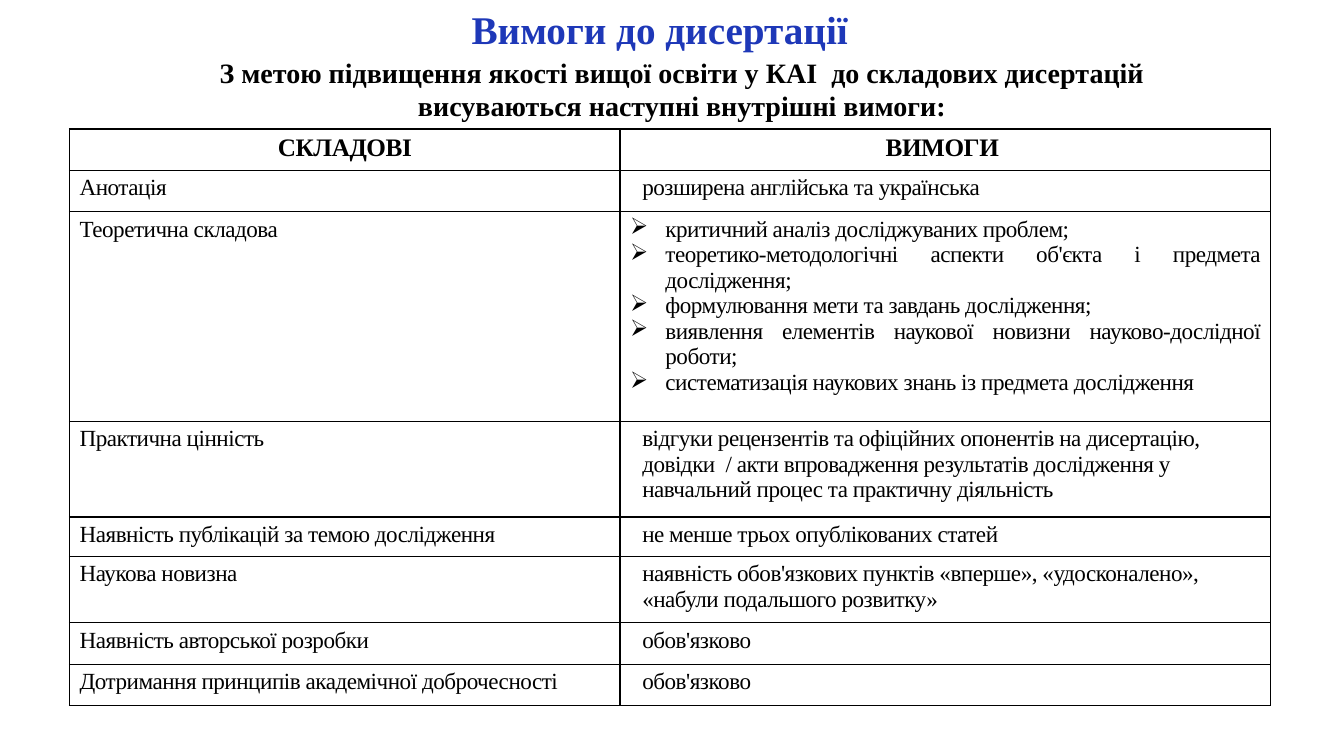
from lxml import etree
from pptx import Presentation
from pptx import util as u
from pptx.dml.color import RGBColor
from pptx.enum import text
from pptx.oxml.ns import qn

TITLE = "Вимоги до дисертації"
INTRO = ["З метою підвищення якості вищої освіти у КАІ  до складових дисертацій ",
         "висуваються наступні внутрішні вимоги: "]
HEADER = ("СКЛАДОВІ", "ВИМОГИ ")
# component, requirement (a list is bulleted), row height
REQUIREMENTS = [
    ("Анотація ", "розширена англійська та українська", 0.41),
    ("Теоретична складова", [
        "критичний аналіз досліджуваних проблем;",
        "теоретико-методологічні аспекти об'єкта і предмета дослідження;",
        "формулювання мети та завдань дослідження;",
        "виявлення елементів наукової новизни науково-дослідної роботи;",
        "систематизація наукових знань із предмета дослідження ",
    ], 2.08),
    ("Практична цінність",
     "відгуки рецензентів та офіційних опонентів на дисертацію, довідки  / акти "
     "впровадження результатів дослідження у навчальний процес та практичну діяльність", 0.95),
    ("Наявність публікацій за темою дослідження ", "не менше трьох опублікованих статей", 0.39),
    ("Наукова новизна",
     "наявність обов'язкових пунктів «вперше», «удосконалено», «набули подальшого розвитку»", 0.66),
    ("Наявність авторської розробки", "обов'язково", 0.41),
    ("Дотримання принципів академічної доброчесності", "обов'язково", 0.41),
]
COLORS = {"title": "1E38B8", "text": "000000"}
FONT = "Times New Roman"
COLUMNS = (5.46, 6.45)
HEADER_HEIGHT = 0.41
BODY_SIZE = 16.5
SPACING = -30  # hundredths of a point
CENTER, JUSTIFY, LEFT = (text.PP_ALIGN.CENTER, text.PP_ALIGN.JUSTIFY, text.PP_ALIGN.LEFT)


def add_run(p, words, size, color="text", bold=False, spacing=None):
    r = p.add_run()
    r.text = words
    r.font.name, r.font.size, r.font.bold = FONT, u.Pt(size), bold
    r.font.color.rgb = RGBColor.from_string(COLORS[color])
    if spacing is not None:
        r.font._element.set("spc", str(spacing))


def add_lines(tf, lines, size, align, indent=0, bullet=None, **style):
    for i, line in enumerate(lines):
        p = tf.paragraphs[0] if i == 0 else tf.add_paragraph()
        p.alignment = align
        pPr = p._p.get_or_add_pPr()
        if indent:
            pPr.set("marL", str(u.Inches(indent)))
        if bullet:
            pPr.set("indent", str(-u.Inches(indent)))
            etree.SubElement(pPr, qn("a:buChar")).set("char", bullet)
        add_run(p, line, size, **style)


def add_text(slide, box, lines, size, align, wrap, **style):
    tf = slide.shapes.add_textbox(*map(u.Inches, box)).text_frame
    tf.word_wrap = wrap
    add_lines(tf, lines, size, align, bold=True, **style)


def add_borders(cell):
    tcPr = cell._tc.get_or_add_tcPr()
    for i, side in enumerate(("a:lnL", "a:lnR", "a:lnT", "a:lnB")):
        ln = etree.Element(qn(side), w=str(u.Pt(1)))
        fill = etree.SubElement(ln, qn("a:solidFill"))
        etree.SubElement(fill, qn("a:srgbClr")).set("val", COLORS["text"])
        tcPr.insert(i, ln)


def add_requirements(slide):
    heights = [HEADER_HEIGHT] + [height for _, _, height in REQUIREMENTS]
    box = (0.69, 1.28, sum(COLUMNS), sum(heights))
    table = slide.shapes.add_table(len(heights), len(COLUMNS), *map(u.Inches, box)).table
    table.first_row = table.horz_banding = False
    for column, width in zip(table.columns, COLUMNS):
        column.width = u.Inches(width)
    for row, height in zip(table.rows, heights):
        row.height = u.Inches(height)
    for cell in table.iter_cells():
        cell.fill.background()
        add_borders(cell)
    for c, label in enumerate(HEADER):
        add_lines(table.cell(0, c).text_frame, [label], 18, CENTER, bold=True, spacing=SPACING)
    for r, (component, requirement, _) in enumerate(REQUIREMENTS, 1):
        left, right = (table.cell(r, c).text_frame for c in (0, 1))
        add_lines(left, [component], BODY_SIZE, JUSTIFY, spacing=SPACING)
        if isinstance(requirement, list):
            add_lines(right, requirement, BODY_SIZE, JUSTIFY, 0.35, "➢", spacing=SPACING)
        else:
            add_lines(right, [requirement], BODY_SIZE, LEFT, 0.12, spacing=SPACING)


def main():
    prs = Presentation()
    prs.slide_width, prs.slide_height = u.Inches(13.33), u.Inches(7.5)
    slide = prs.slides.add_slide(prs.slide_layouts[6])
    add_text(slide, (4.58, 0, 3.97, 0.57), [TITLE], 28, LEFT, False, color="title")
    add_text(slide, (1, 0.5, 11.6, 0.77), INTRO, 20, CENTER, True)
    add_requirements(slide)
    prs.save("out.pptx")


if __name__ == "__main__":
    main()
